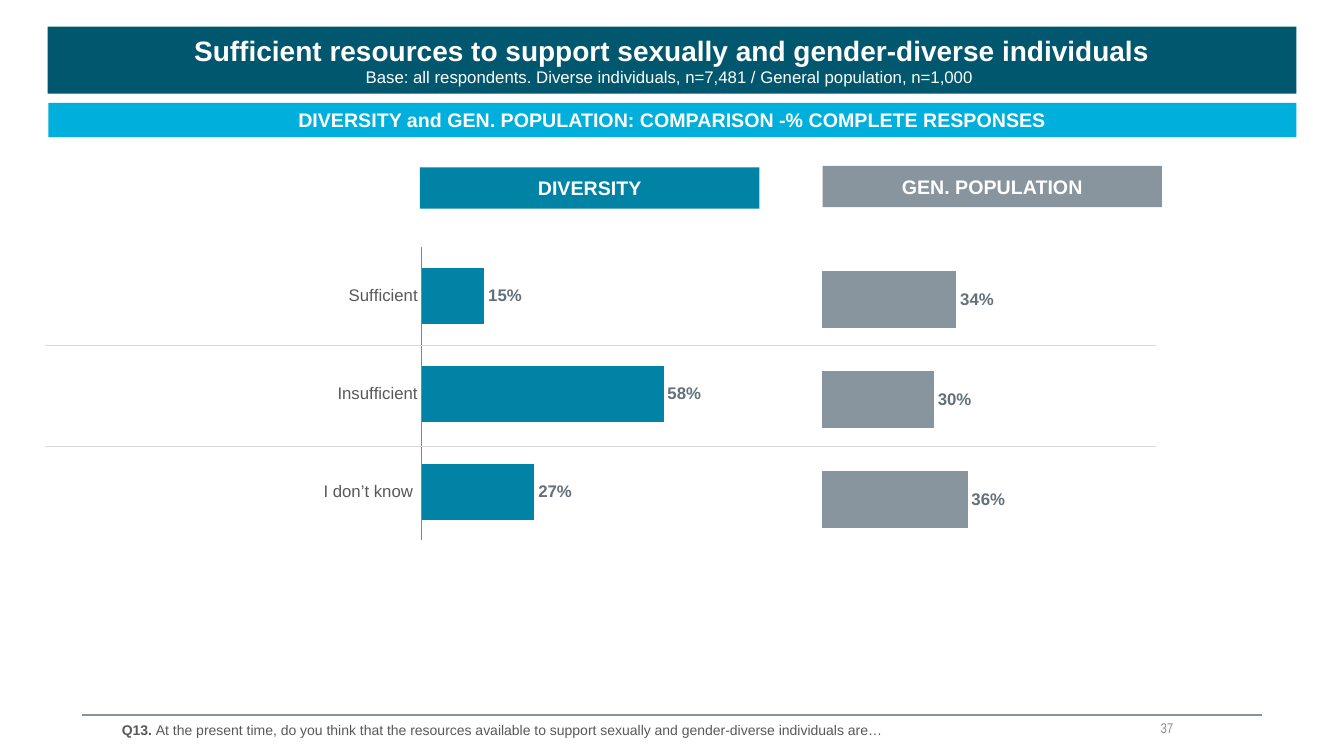
from pptx import Presentation
from pptx.chart.data import CategoryChartData
from pptx.dml.color import RGBColor
from pptx.enum.chart import XL_CHART_TYPE as CT, XL_LABEL_POSITION as LP, XL_TICK_MARK as TM
from pptx.enum.shapes import MSO_CONNECTOR as MC, MSO_SHAPE as MS
from pptx.enum.text import MSO_ANCHOR as MA, PP_ALIGN as PA
from pptx.oxml import parse_xml
from pptx.oxml.ns import nsdecls, qn
from pptx.util import Pt

DARK, TEAL, CYAN, GREY = "00576E", "0083A5", "00AFDC", "88959E"
WHITE, TEXT = "FFFFFF", "595959"


def rgb(value):
    return RGBColor.from_string(value)


def style(font, size, color, bold=False, name="Arial"):
    font.name, font.size, font.bold = name, Pt(size), bold
    font.color.rgb = rgb(color)


prs = Presentation()
prs.slide_width, prs.slide_height = Pt(960), Pt(540)
s = prs.slides.add_slide(prs.slide_layouts[6])

# Banners and column headings: box, fill, lines of (text, size, bold)
bars = [
    ((34, 19, 892, 48), DARK, [
        ("Sufficient resources to support sexually and gender-diverse individuals", 20, True),
        ("Base: all respondents. Diverse individuals, n=7,481 / General population, n=1,000 ", 12, False)]),
    ((34.5, 73.5, 891.5, 24.5), CYAN, [
        ("DIVERSITY and GEN. POPULATION: COMPARISON -% COMPLETE RESPONSES", 14, True)]),
    ((300, 119.5, 242.5, 29.5), TEAL, [("DIVERSITY", 14, True)]),
    ((587.5, 118.5, 242.5, 29.5), GREY, [("GEN. POPULATION", 14, True)]),
]
for box, fill, lines in bars:
    bar = s.shapes.add_shape(MS.RECTANGLE, *map(Pt, box))
    bar.shadow.inherit = False
    bar.fill.solid()
    bar.fill.fore_color.rgb = rgb(fill)
    bar.line.fill.background()
    tf = bar.text_frame
    tf.margin_left = tf.margin_right = tf.margin_top = tf.margin_bottom = 0
    tf.vertical_anchor = MA.MIDDLE
    tf.text = "\n".join(text for text, _, _ in lines)
    for p, (_, size, bold) in zip(tf.paragraphs, lines):
        p.alignment = PA.CENTER
        style(p.runs[0].font, size, WHITE, bold)

# Bar charts: box, inner plot area as fractions, categories, values, axis minimum, colour
charts = [
    ((0, 168.5, 540, 226), (0.558, 0.036, 0.386, 0.927),
     ["Sufficient", "Insufficient", "I don’t know "], [0.15, 0.58, 0.27], 0, TEAL),
    ((406, 177, 446.5, 224), (0.405, 0.005, 0.539, 0.959),
     ["1", "2", "3"], [0.34, 0.3, 0.36], 0.1, GREY),
]
for box, area, cats, values, low, color in charts:
    data = CategoryChartData(number_format="0%")
    data.categories = cats
    data.add_series("Series 1", values)
    chart = s.shapes.add_chart(CT.BAR_CLUSTERED, *map(Pt, box), data).chart
    chart.has_legend = chart.has_title = False
    style(chart.font, 18, "000000", name="Calibri")

    plot = chart.plots[0]
    plot.gap_width = 75
    plot.vary_by_categories = False
    fill = plot.series[0].format.fill
    fill.solid()
    fill.fore_color.rgb = rgb(color)
    plot.has_data_labels = True
    labels = plot.data_labels
    labels.show_value = True
    labels.number_format, labels.number_format_is_linked = "0%", False
    labels.position = LP.OUTSIDE_END
    style(labels.font, 12, "637079", True)

    val, cat = chart.value_axis, chart.category_axis
    val.minimum_scale, val.maximum_scale = low, 0.7
    val.has_major_gridlines = False
    val.visible = False
    cat.reverse_order = True
    cat.major_tick_mark = cat.minor_tick_mark = TM.NONE
    cat.format.line.color.rgb = rgb("868686")
    cat.format.line.width = Pt(0.75)
    style(cat.tick_labels.font, 12, TEXT)
    cat.visible = color == TEAL

    plot_area = chart.element.find(".//" + qn("c:plotArea"))
    for old in plot_area.findall(qn("c:layout")):
        plot_area.remove(old)
    modes = '<c:xMode val="edge"/><c:yMode val="edge"/>'
    sizes = "".join(f'<c:{key} val="{v}"/>' for key, v in zip("xywh", area))
    plot_area.insert(0, parse_xml(
        f'<c:layout {nsdecls("c")}><c:manualLayout><c:layoutTarget val="inner"/>'
        f'{modes}{sizes}</c:manualLayout></c:layout>'))

# Row separators and footer rule
for x1, x2, y, color, width in [(32.5, 826, 247, "D9D9D9", 0.75),
                                (32.5, 826, 319, "D9D9D9", 0.75),
                                (58.5, 901.5, 510.5, GREY, 1.5)]:
    rule = s.shapes.add_connector(MC.STRAIGHT, Pt(x1), Pt(y), Pt(x2), Pt(y))
    rule.line.color.rgb = rgb(color)
    rule.line.width = Pt(width)
    rule._element.spPr.append(parse_xml(f'<a:effectLst {nsdecls("a")}/>'))

# Question
tf = s.shapes.add_textbox(Pt(80), Pt(511.5), Pt(809), Pt(19.5)).text_frame
tf.word_wrap = True
p = tf.paragraphs[0]
for text, bold in [
        ("Q13. ", True),
        ("At the present time, do you think that the resources available to support "
         "sexually and gender-diverse individuals are…", False)]:
    r = p.add_run()
    r.text = text
    style(r.font, 10, TEXT, bold)

# Page number
tf = s.shapes.add_textbox(Pt(628.5), Pt(510.5), Pt(209.5), Pt(18.5)).text_frame
tf.word_wrap = True
tf.margin_left = tf.margin_right = tf.margin_top = tf.margin_bottom = 0
tf.vertical_anchor = MA.MIDDLE
tf.text = "37"
p = tf.paragraphs[0]
p.alignment = PA.RIGHT
style(p.runs[0].font, 10, "8C8C8C", name="Arial Narrow")

prs.save("out.pptx")
